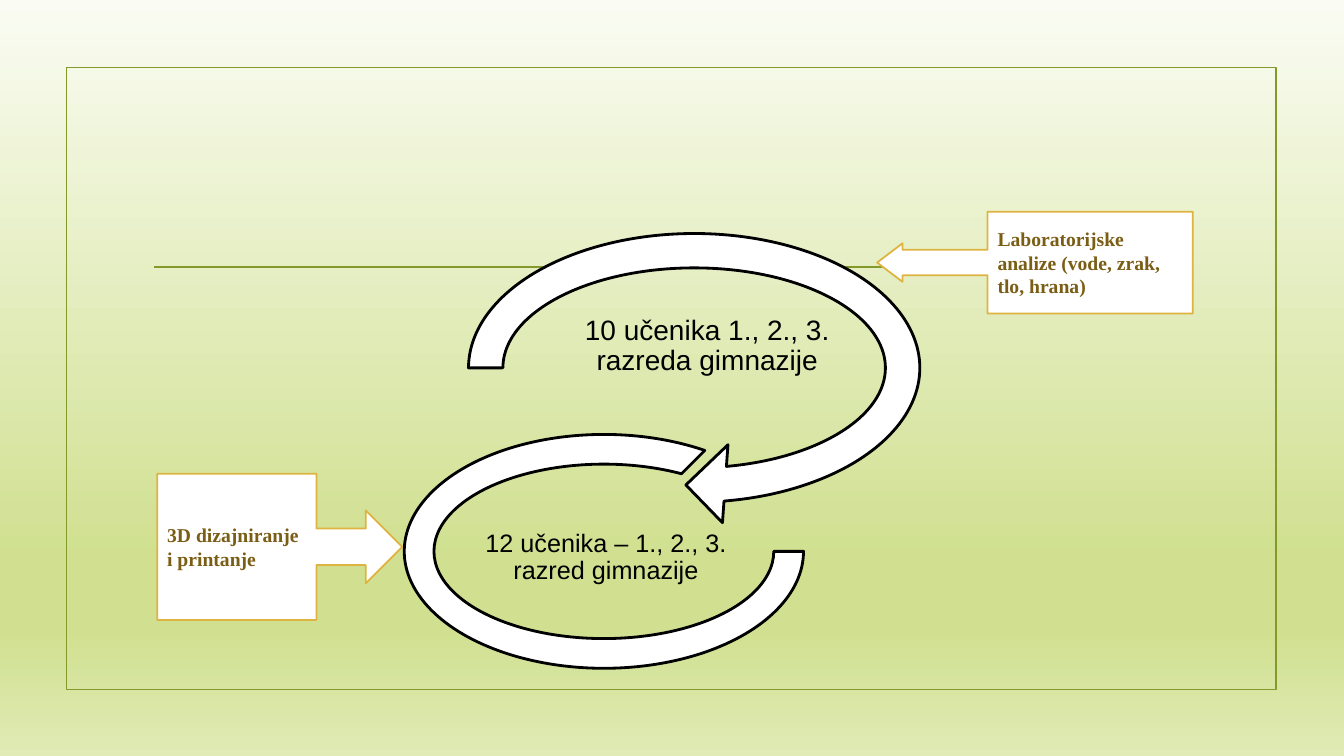
from lxml import etree
from pptx import Presentation
from pptx.dml.color import RGBColor
from pptx.enum.shapes import MSO_CONNECTOR, MSO_SHAPE as SHAPE
from pptx.enum.text import MSO_ANCHOR, PP_ALIGN as ALIGN
from pptx.oxml.ns import qn
from pptx.util import Inches, Pt

WHITE, BLACK, GREEN = "FFFFFF", "000000", "83992A"
GOLD, BROWN = "DEB340", "7A5E15"
BACKGROUND = [(0, "FAFCF3"), (74, "D0E090"), (83, "D0E090"), (100, "E0EBB5")]


def rgb(color):
    """Return the colour for a hex string."""
    return RGBColor.from_string(color)


def set_background(slide, stops):
    """Fill the slide background with a gradient running downwards."""
    fill = slide.background.fill
    fill.gradient()
    fill.gradient_angle = 270
    stop_list = next(slide.element.iter(qn("a:gsLst")))
    for old in list(stop_list):
        stop_list.remove(old)
    for percent, color in stops:
        stop = etree.SubElement(stop_list, qn("a:gs"), pos=str(percent * 1000))
        etree.SubElement(stop, qn("a:srgbClr"), val=color)


def add_outline(slide, kind, box, color, width, fill=WHITE, adjustments=()):
    """Add a preset shape with a coloured outline."""
    sp = slide.shapes.add_shape(kind, *map(Inches, box))
    sp.shadow.inherit = False
    if fill:
        sp.fill.solid()
        sp.fill.fore_color.rgb = rgb(fill)
    else:
        sp.fill.background()
    sp.line.color.rgb = rgb(color)
    sp.line.width = Pt(width)
    for i, value in enumerate(adjustments):
        sp.adjustments[i] = value
    return sp


def add_rule(slide, start, end, color, width):
    """Add a straight line without a shadow."""
    line = slide.shapes.add_connector(
        MSO_CONNECTOR.STRAIGHT, *map(Inches, start + end))
    line.line.color.rgb = rgb(color)
    line.line.width = Pt(width)
    etree.SubElement(line._element.spPr, qn("a:effectLst"))


def write(sp, text, size, font="Arial", color=BLACK, bold=False,
          align=ALIGN.CENTER, spacing=1.0, inset=None):
    """Write one formatted paragraph into a shape."""
    tf = sp.text_frame
    tf.word_wrap = True
    tf.vertical_anchor = MSO_ANCHOR.MIDDLE
    if inset is not None:
        tf.margin_left = tf.margin_right = Inches(inset)
        tf.margin_top = tf.margin_bottom = Inches(inset)
    p = tf.paragraphs[0]
    p.alignment = align
    p.line_spacing = spacing
    r = p.add_run()
    r.text = text
    r.font.name = font
    r.font.size = Pt(size)
    r.font.bold = bold
    r.font.color.rgb = rgb(color)


def add_ring(slide, kind, box, adjustments, text, text_box, size):
    """Add an open ring and the text inside it."""
    add_outline(slide, kind, box, BLACK, 2, adjustments=adjustments)
    label = slide.shapes.add_textbox(*map(Inches, text_box))
    write(label, text, size, spacing=0.9, inset=0.01)


def add_callout(slide, kind, box, text, adjustments=()):
    """Add an arrow callout with bold text."""
    sp = add_outline(slide, kind, box, GOLD, 1.25, adjustments=adjustments)
    write(sp, text, 14, font="Times New Roman", color=BROWN, bold=True,
          align=ALIGN.LEFT)


def main():
    """Build the slide and save it."""
    prs = Presentation()
    prs.slide_width, prs.slide_height = Inches(13.33), Inches(7.5)
    slide = prs.slides.add_slide(prs.slide_layouts[6])
    set_background(slide, BACKGROUND)
    add_outline(slide, SHAPE.RECTANGLE, (0.66, 0.67, 12, 6.17), GREEN, 1.25,
                fill=None)
    add_rule(slide, (1.53, 2.65), (11.81, 2.65), GREEN, 1.25)
    add_ring(slide, SHAPE.CIRCULAR_ARROW, (4.43, 2.1, 4.91, 3.1),
             (0.11, 11.42, 45, 108, 0.125),
             "10 učenika 1., 2., 3. razreda gimnazije",
             (5.66, 3, 2.71, 0.87), 20)
    add_ring(slide, SHAPE.BLOCK_ARC, (4.01, 4.31, 3.96, 2.32),
             (0, 189, 0.127),
             "12 učenika – 1., 2., 3. razred gimnazije",
             (4.57, 4.9, 2.88, 1.27), 18)
    add_callout(slide, SHAPE.LEFT_ARROW_CALLOUT, (8.7, 2.1, 3.13, 1.01),
                "Laboratorijske analize (vode, zrak, tlo, hrana)",
                (0.25, 0.19, 0.25, 0.65))
    add_callout(slide, SHAPE.RIGHT_ARROW_CALLOUT, (1.56, 4.7, 2.43, 1.45),
                "3D dizajniranje i printanje")
    prs.save("out.pptx")


if __name__ == "__main__":
    main()
